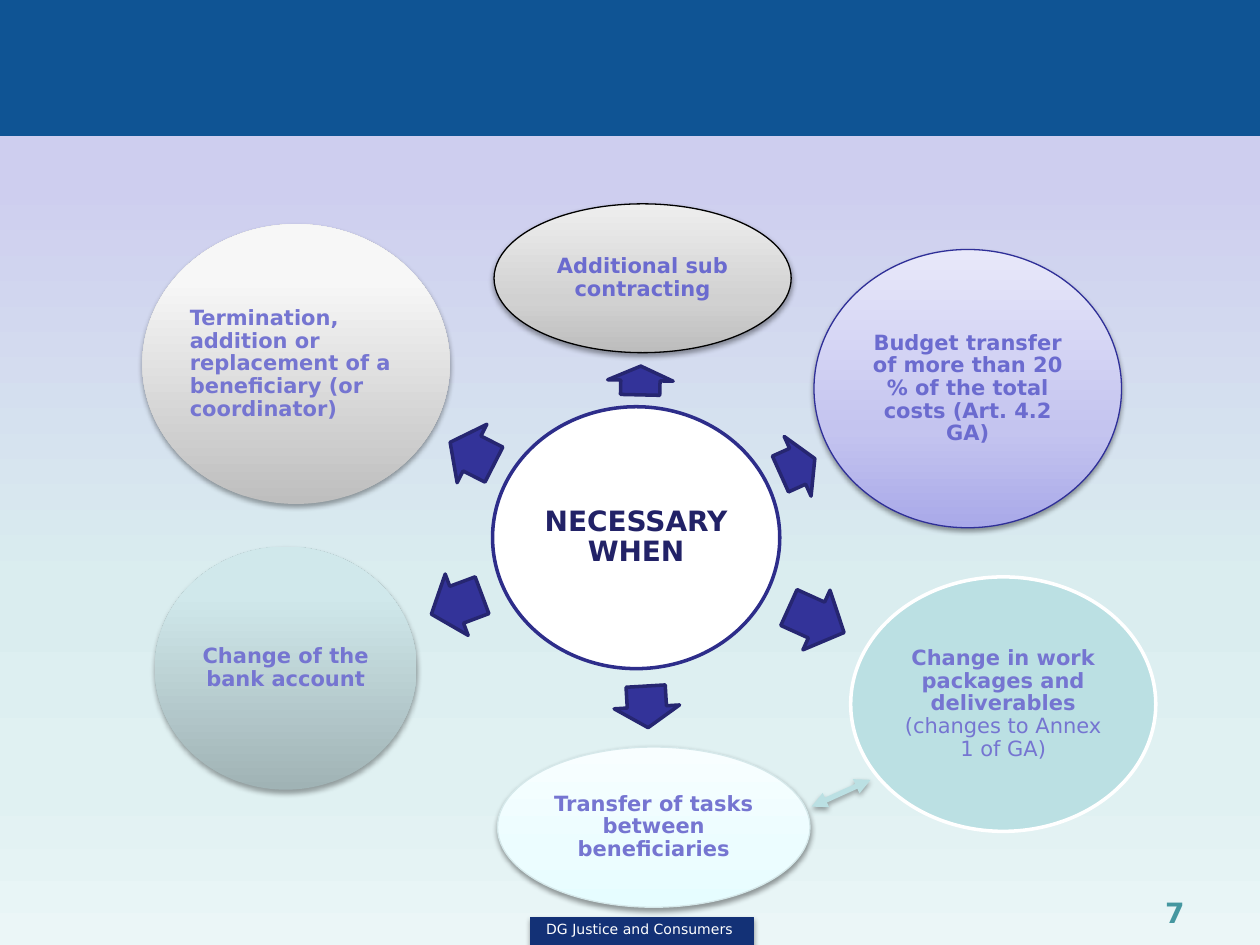
"""Build the slide that shows when an amendment is necessary."""
from dataclasses import dataclass

from pptx import Presentation
from pptx import util as u
from pptx.dml import color
from pptx.enum import shapes, text
from pptx.oxml import ns, xmlchemy


@dataclass(frozen=True)
class Theme:
    """Colours, font and type sizes of the slide."""
    font: str = "DejaVu Sans"
    small: float = 8
    label: float = 12
    heading: float = 16
    band: str = "0F5494"
    footer: str = "133176"
    white: str = "FFFFFF"
    black: str = "000000"
    navy: str = "222267"
    ring: str = "2D2D8A"
    arrow: str = "333399"
    arrow_edge: str = "262671"
    violet: str = "6B6BCF"
    lilac: str = "7575D1"
    lilac_edge: str = "2F2F98"
    aqua: str = "BBE0E3"
    aqua_edge: str = "D5E8EA"
    number: str = "4597A0"
    backdrop: tuple = ((19, "CECEEF"), (62, "DAEDEF"), (83, "E0F1F2"), (100, "EBF6F7"))
    grey: tuple = ((0, "BDBDBD"), (35, "D1D1D1"), (100, "EEEEEE"))
    lavender: tuple = ((0, "A9A9E9"), (35, "C4C4EF"), (100, "E8E8FA"))
    ice: tuple = ((0, "E6FDFF"), (35, "ECFDFF"), (100, "F8FEFF"))
    teal: tuple = ((0, "A0B3B5"), (80, "D0E8EB"), (100, "D1EAEC"))
    silver: tuple = ((0, "BEBEBE"), (80, "F7F7F7"), (100, "F8F8F8"))


THEME = Theme()


def rgb(value):
    """Turn a hex string into a colour."""
    return color.RGBColor.from_string(value)


def add_element(parent, tag, **attributes):
    """Append a drawing element with the given attributes."""
    child = xmlchemy.OxmlElement(tag)
    for name, value in attributes.items():
        child.set(name, str(value))
    parent.append(child)
    return child


def set_gradient(fill, owner, stops, angle):
    """Give a fill a linear gradient with any number of stops."""
    fill.gradient()
    fill.gradient_angle = angle
    stop_list = owner.find(".//" + ns.qn("a:gsLst"))
    for old in list(stop_list):
        stop_list.remove(old)
    for position, value in stops:
        stop = add_element(stop_list, "a:gs", pos=position * 1000)
        add_element(stop, "a:srgbClr", val=value)


def add_shadow(effects, opacity=35, distance=1.8):
    """Add a soft shadow that falls straight down."""
    shadow = add_element(effects, "a:outerShdw", blurRad=u.Pt(3.1), dist=u.Pt(distance),
                         dir=90 * 60000, algn="ctr", rotWithShape=0)
    shade = add_element(shadow, "a:srgbClr", val=THEME.black)
    add_element(shade, "a:alpha", val=opacity * 1000)


def add_figure(page, kind, frame, fill, line=None, width=0.75, shadow=None):
    """Add a preset shape with a solid or gradient fill."""
    figure = page.shapes.add_shape(kind, *map(u.Cm, frame))
    figure.shadow.inherit = False
    if isinstance(fill, str):
        figure.fill.solid()
        figure.fill.fore_color.rgb = rgb(fill)
    else:
        set_gradient(figure.fill, figure.element, fill, 90)
    if line:
        figure.line.color.rgb = rgb(line)
        figure.line.width = u.Pt(width)
    else:
        figure.line.fill.background()
    if shadow:
        add_shadow(figure.element.spPr.find(ns.qn("a:effectLst")), *shadow)
    return figure


def write(shape, spans, size, ink, align=text.PP_ALIGN.CENTER, spacing=None, inset=None,
          anchor=text.MSO_ANCHOR.TOP):
    """Write one paragraph of (wording, bold) spans into a shape."""
    frame = shape.text_frame
    frame.word_wrap = True
    frame.vertical_anchor = anchor
    if inset is not None:
        frame.margin_left = frame.margin_right = u.Cm(inset)
        frame.margin_top = frame.margin_bottom = u.Cm(inset)
    para = frame.paragraphs[0]
    para.alignment = align
    para.line_spacing = spacing
    for wording, bold in spans:
        span = para.add_run()
        span.text = wording
        span.font.name = THEME.font
        span.font.size = u.Pt(size)
        span.font.bold = bold
        span.font.color.rgb = rgb(ink)


def add_text(page, frame, spans, size, ink, **layout):
    """Add a text box."""
    write(page.shapes.add_textbox(*map(u.Cm, frame)), spans, size, ink, **layout)


def add_oval(page, frame, spans, fill, ink, size=THEME.label,
             align=text.PP_ALIGN.CENTER, **outline):
    """Add an ellipse with its label."""
    oval = add_figure(page, shapes.MSO_SHAPE.OVAL, frame, fill, **outline)
    write(oval, spans, size, ink, align=align, spacing=0.9, inset=0.05,
          anchor=text.MSO_ANCHOR.MIDDLE)


def add_arrow(page, left, top, length, angle):
    """Add a block arrow that points away from the centre."""
    arrow = add_figure(page, shapes.MSO_SHAPE.RIGHT_ARROW, (left, top, length, 1.32),
                       THEME.arrow, THEME.arrow_edge, 2)
    arrow.adjustments[0] = 0.6
    arrow.adjustments[1] = 0.5
    arrow.rotation = angle


def add_link(page, *ends):
    """Add a line with an arrowhead at each end."""
    link = page.shapes.add_connector(shapes.MSO_CONNECTOR.STRAIGHT, *map(u.Cm, ends))
    link.line.color.rgb = rgb(THEME.aqua)
    link.line.width = u.Pt(3)
    for tag in ("a:headEnd", "a:tailEnd"):
        add_element(link.line._get_or_add_ln(), tag, type="triangle")
    add_shadow(add_element(link._element.spPr, "a:effectLst"))


def add_ovals(page):
    """Add the central question and the six cases around it."""
    lifted, soft = (38, 1.6), (35, 1.8)
    add_oval(page, (9.93, 8.2, 5.79, 5.28), [("NECESSARY WHEN", True)], THEME.white,
             THEME.navy, size=THEME.heading, line=THEME.ring, width=2)
    add_oval(page, (9.96, 4.11, 5.99, 3), [("Additional sub contracting", True)],
             THEME.grey, THEME.violet, line=THEME.black, shadow=lifted)
    add_oval(page, (16.41, 5.03, 6.2, 5.61),
             [("Budget transfer of more than 20 % of the total costs (Art. 4.2 GA)", True)],
             THEME.lavender, THEME.violet, line=THEME.lilac_edge, shadow=lifted)
    add_oval(page, (17.15, 11.63, 6.15, 5.13),
             [("Change in work packages and deliverables ", True),
              ("(changes to Annex 1 of GA)", False)],
             THEME.aqua, THEME.lilac, line=THEME.white, width=2)
    add_oval(page, (10.03, 15.06, 6.3, 3.23),
             [("Transfer of tasks between beneficiaries", True)],
             THEME.ice, THEME.lilac, line=THEME.aqua_edge, shadow=lifted)
    add_oval(page, (3.12, 11.02, 5.28, 4.9), [("Change of the bank account", True)],
             THEME.teal, THEME.lilac, shadow=soft)
    add_oval(page, (2.87, 4.52, 6.2, 5.64),
             [("Termination, addition or replacement of a beneficiary (or coordinator)", True)],
             THEME.silver, THEME.lilac, align=text.PP_ALIGN.LEFT, shadow=soft)


def main():
    """Build and save the deck."""
    deck = Presentation()
    deck.slide_width, deck.slide_height = u.Cm(25.4), u.Cm(19.05)
    page = deck.slides.add_slide(deck.slide_layouts[6])
    set_gradient(page.background.fill, page.element, THEME.backdrop, 270)
    rectangle = shapes.MSO_SHAPE.RECTANGLE
    add_figure(page, rectangle, (0, 0, 25.4, 2.74), THEME.band, THEME.band)
    add_figure(page, rectangle, (10.69, 18.49, 4.5, 0.56), THEME.footer, THEME.footer,
               shadow=(35, 1.8))
    add_text(page, (8.97, 18.44, 7.85, 0.91), [("DG Justice and Consumers", False)],
             THEME.small, THEME.white)
    add_ovals(page)
    for arrow in ((12.62, 7.01, 0.58, 271.3), (15.7, 8.74, 0.76, 335.8),
                  (15.85, 11.84, 1.22, 24.4), (12.62, 13.59, 0.84, 86.6),
                  (8.66, 11.53, 1.09, 159.5), (9.02, 8.48, 0.99, 207)):
        add_arrow(page, *arrow)
    add_link(page, 17.55, 15.72, 16.36, 16.26)
    add_text(page, (18.21, 17.92, 5.92, 0.9), [("7", True)], THEME.heading, THEME.number,
             align=text.PP_ALIGN.RIGHT)
    deck.save("out.pptx")


if __name__ == "__main__":
    main()
